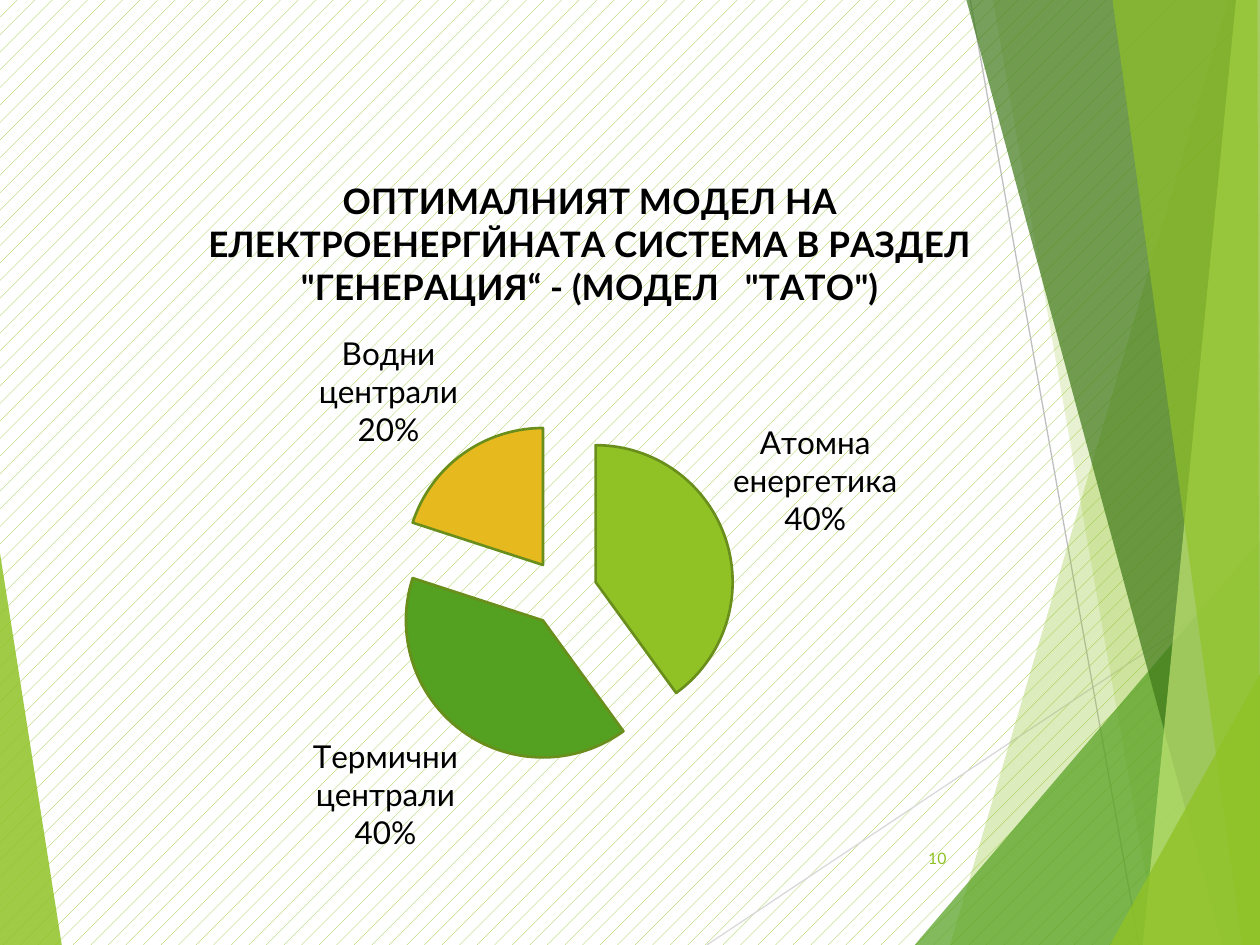
from lxml import etree
from pptx import Presentation
from pptx.chart.data import CategoryChartData
from pptx.dml.color import RGBColor
from pptx.enum import chart as ch, dml, shapes, text
from pptx.oxml import parse_xml
from pptx.oxml.ns import nsdecls, qn
from pptx.util import Inches, Pt

FONT = "Lato"
GREEN = "90C226"
WIDTH, HEIGHT = 10, 7.5
TITLE = ('ОПТИМАЛНИЯТ МОДЕЛ НА ЕЛЕКТРОЕНЕРГЙНАТА СИСТЕМА В РАЗДЕЛ '
         '"ГЕНЕРАЦИЯ“ - (МОДЕЛ   "ТАТО")')
GENERATION = [("Атомна енергетика", 40, GREEN),
              ("Термични централи", 40, "54A021"),
              ("Водни централи", 20, "E6B91E")]

# Facets from back to front: corner points, colour, opacity in percent
LEFT_FACET = ([(0, 4.39), (0.49, 7.5), (0, 7.5)], GREEN, 85)
RIGHT_FACETS = [
    ([(9.75, 0), (7.54, 7.5), (10, 7.5), (10, 0)], GREEN, 30),
    ([(7.88, 0), (9.19, 7.5), (10, 7.5), (10, 0)], GREEN, 20),
    ([(7.26, 7.5), (10, 4.29), (10, 7.5)], "54A021", 72),
    ([(7.67, 0), (9.7, 7.5), (10, 7.5), (10, 0)], "3F7819", 70),
    ([(9.81, 0), (9.07, 7.5), (10, 7.5), (10, 0)], "C0E474", 70),
    ([(8.83, 0), (9.86, 7.5), (10, 7.5), (9.98, 0)], GREEN, 65),
    ([(8.81, 7.5), (10, 5.35), (10, 7.5)], GREEN, 80),
]
LINES = [((5.61, 7.5), (10, 4.57), "D9D9D9"),
         ((7.7, 0), (9.04, 7.5), "BFBFBF")]


def color(value):
    return RGBColor.from_string(value)


def format_font(font, size, value, bold=False):
    font.name, font.size, font.bold = FONT, Pt(size), bold
    font.color.rgb = color(value)


def add_background(slide):
    fill = slide.background.fill
    fill.patterned()
    fill.pattern = dml.MSO_PATTERN.PERCENT_5
    fill.fore_color.rgb = color(GREEN)
    fill.back_color.rgb = color("FFFFFF")


def add_facet(slide, points, value, opacity):
    corners = [(Inches(x), Inches(y)) for x, y in points]
    builder = slide.shapes.build_freeform(*corners[0])
    builder.add_line_segments(corners[1:], close=True)
    shape = builder.convert_to_shape()
    shape.shadow.inherit = False
    shape.line.fill.background()
    shape.fill.solid()
    shape.fill.fore_color.rgb = color(value)
    solid = shape.fill._xPr.find(qn("a:solidFill"))
    etree.SubElement(solid[0], qn("a:alpha")).set("val", str(opacity * 1000))


def add_line(slide, start, end, value):
    line = slide.shapes.add_connector(
        shapes.MSO_CONNECTOR.STRAIGHT, *map(Inches, start + end))
    line.line.color.rgb = color(value)
    line.line.width = Pt(0.75)
    etree.SubElement(line._element.spPr, qn("a:effectLst"))


def add_decoration(slide):
    add_facet(slide, *LEFT_FACET)
    for line in LINES:
        add_line(slide, *line)
    for facet in RIGHT_FACETS:
        add_facet(slide, *facet)


def add_page_number(slide, box, number):
    shape = slide.shapes.add_textbox(*map(Inches, box))
    frame = shape.text_frame
    frame.word_wrap = True
    frame.vertical_anchor = text.MSO_ANCHOR.MIDDLE
    frame.text = number
    paragraph = frame.paragraphs[0]
    paragraph.alignment = text.PP_ALIGN.RIGHT
    format_font(paragraph.runs[0].font, 9, GREEN)


def set_layout(element, following, target=None, **fractions):
    """Place a chart part by fractions of the chart's box."""
    for old in element.findall(qn("c:layout")):
        element.remove(old)
    inner = f'<c:layoutTarget val="{target}"/>' if target else ""
    inner += "".join(f'<c:{axis}Mode val="edge"/>' for axis in "xy")
    inner += "".join(f'<c:{key} val="{value}"/>'
                     for key, value in fractions.items())
    layout = parse_xml(f'<c:layout {nsdecls("c")}><c:manualLayout>{inner}'
                       '</c:manualLayout></c:layout>')
    element.find(qn(following)).addprevious(layout)


def add_generation_chart(slide, box):
    data = CategoryChartData()
    data.categories = [name for name, _, _ in GENERATION]
    data.add_series("Series 1", [value for _, value, _ in GENERATION])
    chart = slide.shapes.add_chart(
        ch.XL_CHART_TYPE.PIE, *map(Inches, box), data).chart
    format_font(chart.font, 18, "000000")
    chart.has_legend = False

    # Title
    chart.has_title = True
    frame = chart.chart_title.text_frame
    frame.text = TITLE
    format_font(frame.paragraphs[0].runs[0].font, 20, "000000", bold=True)
    chart.chart_title.include_in_layout = False
    set_layout(chart.chart_title._element, "c:overlay", x=0.15, y=0.04)

    # Slices, pulled apart
    plot = chart.plots[0]
    plot.vary_by_categories = True
    series = plot.series[0]
    for index, (_, _, value) in enumerate(GENERATION):
        slice_format = series.points[index].format
        slice_format.fill.solid()
        slice_format.fill.fore_color.rgb = color(value)
        slice_format.line.color.rgb = color("698E1C")
        slice_format.line.width = Pt(1.5)
    explosion = parse_xml(f'<c:explosion {nsdecls("c")} val="25"/>')
    series._element.find(qn("c:dPt")).addprevious(explosion)
    set_layout(plot._element.getparent(), "c:pieChart", "inner",
               x=0.32, y=0.38, w=0.31, h=0.46)

    # Labels
    plot.has_data_labels = True
    labels = plot.data_labels
    labels.show_category_name = labels.show_percentage = True
    labels.show_value = False
    labels.position = ch.XL_LABEL_POSITION.OUTSIDE_END
    format_font(labels.font, 18, "000000")
    separator = parse_xml(f'<c:separator {nsdecls("c")}>\n</c:separator>')
    labels._element.find(qn("c:showBubbleSize")).addnext(separator)


def main():
    presentation = Presentation()
    presentation.slide_width = Inches(WIDTH)
    presentation.slide_height = Inches(HEIGHT)
    slide = presentation.slides.add_slide(presentation.slide_layouts[6])
    add_background(slide)
    add_decoration(slide)
    add_page_number(slide, (7.05, 6.61, 0.56, 0.4), "10")
    add_generation_chart(slide, (0.28, 1.1, 8.82, 5.91))
    presentation.save("out.pptx")


if __name__ == "__main__":
    main()
